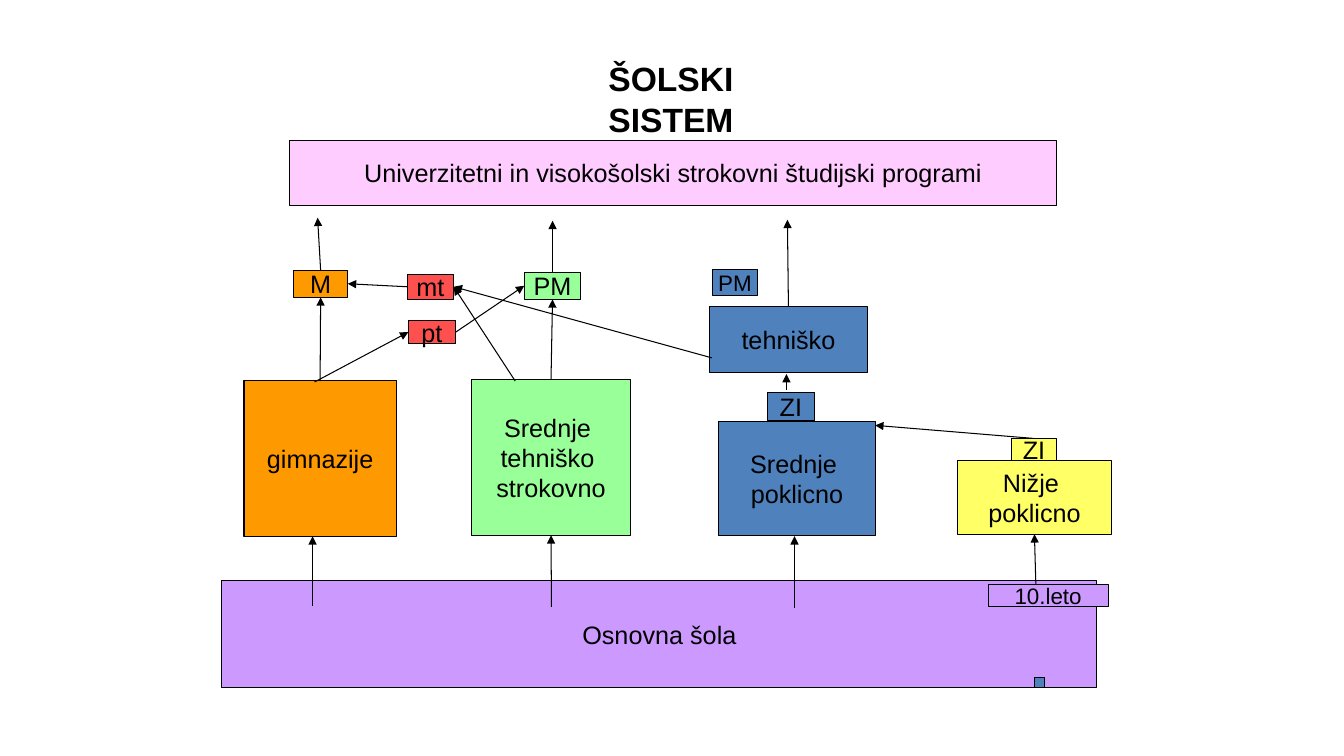
import pptx
import pptx.util
import pptx.dml.color
import pptx.enum.shapes
import pptx.enum.text
import pptx.oxml

Inches = pptx.util.Inches
Pt = pptx.util.Pt
RGBColor = pptx.dml.color.RGBColor
MSO_SHAPE = pptx.enum.shapes.MSO_SHAPE
MSO_CONNECTOR = pptx.enum.shapes.MSO_CONNECTOR
MSO_ANCHOR = pptx.enum.text.MSO_ANCHOR
MSO_AUTO_SIZE = pptx.enum.text.MSO_AUTO_SIZE
PP_ALIGN = pptx.enum.text.PP_ALIGN

BLACK = RGBColor(0x00, 0x00, 0x00)
PURPLE = RGBColor(0xCC, 0x99, 0xFF)
YELLOW = RGBColor(0xFF, 0xFF, 0x66)
BLUE = RGBColor(0x4F, 0x81, 0xBD)
GREEN = RGBColor(0x99, 0xFF, 0x99)
ORANGE = RGBColor(0xFF, 0x99, 0x00)
RED = RGBColor(0xFF, 0x50, 0x50)
PINK = RGBColor(0xFF, 0xCC, 0xFF)
TOP, LEFT, BOTTOM, RIGHT = range(4)

BOXES = [
    ("primary", "Osnovna šola", PURPLE, (2.2, 5.76, 8.68, 1.06)),
    ("lower", "Nižje \npoklicno", YELLOW, (9.5, 4.57, 1.52, 0.73)),
    ("marker", "", BLUE, (10.26, 6.72, 0.1, 0.1)),
    ("vocational", "Srednje \npoklicno", BLUE, (7.13, 4.18, 1.55, 1.13)),
    ("technical", "Srednje \ntehniško \nstrokovno", GREEN, (4.68, 3.77, 1.57, 1.54)),
    ("grammar", "gimnazije", ORANGE, (2.42, 3.78, 1.51, 1.54)),
    ("M", "M", ORANGE, (2.91, 2.68, 0.54, 0.27)),
    ("PM", "PM", GREEN, (5.2, 2.7, 0.56, 0.27)),
    ("mt", "mt", RED, (4.04, 2.72, 0.46, 0.25)),
    ("pt", "pt", RED, (4.05, 3.18, 0.47, 0.23)),
    ("ZI blue", "ZI", BLUE, (7.61, 3.89, 0.47, 0.28)),
    ("ZI yellow", "ZI", YELLOW, (10.03, 4.35, 0.45, 0.22)),
    ("tehniško", "tehniško", BLUE, (7.04, 3.04, 1.56, 0.66)),
    ("university", "Univerzitetni in visokošolski strokovni študijski programi",
     PINK, (2.87, 1.39, 7.61, 0.65)),
]

ARROWS = [
    ((3.1, 6.01), (3.1, 5.32)),
    ((7.88, 6.03), (7.88, 5.32)),
    ((10.28, 6.02), ("lower", BOTTOM)),
    ((5.47, 6.02), ("technical", BOTTOM)),
    ((5.11, 3.78), ("mt", RIGHT)),
    (("mt", LEFT), ("M", RIGHT)),
    ((3.12, 3.79), ("pt", LEFT)),
    (("pt", RIGHT), ("PM", LEFT)),
    (("ZI yellow", TOP), (8.68, 4.22)),
    ((7.06, 3.55), ("mt", RIGHT)),
    (("M", TOP), (3.15, 2.16)),
    (("grammar", TOP), ("M", BOTTOM)),
    (("technical", TOP), ("PM", BOTTOM)),
    (("PM", TOP), (5.48, 2.19)),
    ((7.8, 3.87), (7.8, 3.71)),
    (("tehniško", TOP), (7.81, 2.18)),
]


def write_text(s, text, size=18, bold=False):
    tf = s.text_frame
    tf.word_wrap = False
    for i, line in enumerate(text.split("\n")):
        p = tf.paragraphs[0] if i == 0 else tf.add_paragraph()
        p.alignment = PP_ALIGN.CENTER
        r = p.add_run()
        r.text = line
        r.font.name = "Arial"
        r.font.size = Pt(size)
        r.font.bold = bold
        r.font.color.rgb = BLACK


def add_title(sp, text, at):
    s = sp.add_textbox(*map(Inches, at))
    write_text(s, text, size=24, bold=True)
    s.text_frame.auto_size = MSO_AUTO_SIZE.SHAPE_TO_FIT_TEXT


def add_box(sp, text, fill, at, size=18):
    s = sp.add_shape(MSO_SHAPE.RECTANGLE, *map(Inches, at))
    s.shadow.inherit = False
    s.fill.solid()
    s.fill.fore_color.rgb = fill
    s.line.color.rgb = BLACK
    s.line.width = Pt(0.75)
    s.text_frame.vertical_anchor = MSO_ANCHOR.MIDDLE
    if text:
        write_text(s, text, size=size)
    return s


def add_arrow(sp, boxes, start, end):
    points = [(0, 0) if p[0] in boxes else p for p in (start, end)]
    c = sp.add_connector(MSO_CONNECTOR.STRAIGHT, *(Inches(v) for p in points for v in p))
    if start[0] in boxes:
        c.begin_connect(boxes[start[0]], start[1])
    if end[0] in boxes:
        c.end_connect(boxes[end[0]], end[1])
    c.line.color.rgb = BLACK
    c.line.width = Pt(0.75)
    tail = pptx.oxml.parse_xml(
        '<a:tailEnd xmlns:a="http://schemas.openxmlformats.org/drawingml/2006/main" type="triangle"/>')
    c.line._get_or_add_ln().append(tail)
    effects = pptx.oxml.parse_xml(
        '<a:effectLst xmlns:a="http://schemas.openxmlformats.org/drawingml/2006/main"/>')
    c._element.spPr.append(effects)


def main():
    prs = pptx.Presentation()
    prs.slide_width = Inches(13.33)
    prs.slide_height = Inches(7.5)
    sp = prs.slides.add_slide(prs.slide_layouts[6]).shapes
    add_title(sp, "ŠOLSKI SISTEM", (5.27, 0.53, 2.77, 0.5))
    boxes = {name: add_box(sp, text, fill, at) for name, text, fill, at in BOXES}
    for start, end in ARROWS:
        add_arrow(sp, boxes, start, end)
    add_box(sp, "10.leto", PURPLE, (9.8, 5.8, 1.19, 0.22), size=16)
    add_box(sp, "PM", BLUE, (7.07, 2.67, 0.44, 0.26), size=16)
    prs.save("out.pptx")


if __name__ == "__main__":
    main()
